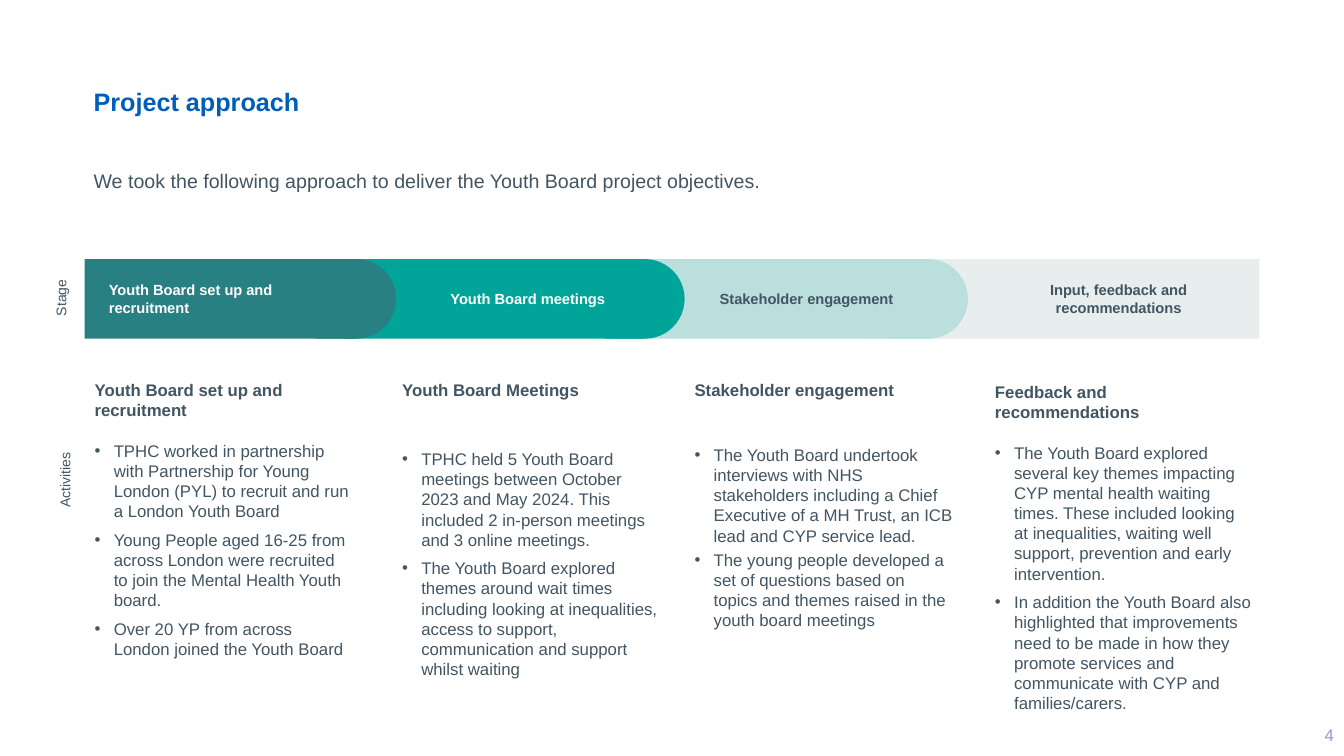
from dataclasses import dataclass

from lxml import etree
from pptx import Presentation
from pptx.dml.color import RGBColor
from pptx.enum.shapes import MSO_SHAPE
from pptx.enum.text import MSO_ANCHOR, PP_ALIGN
from pptx.oxml.ns import qn
from pptx.util import Inches, Pt

RECT, CAP = MSO_SHAPE.RECTANGLE, MSO_SHAPE.FLOWCHART_DELAY
TOP, MID = MSO_ANCHOR.TOP, MSO_ANCHOR.MIDDLE
LEFT, MIDDLE, RIGHT = PP_ALIGN.LEFT, PP_ALIGN.CENTER, PP_ALIGN.RIGHT


@dataclass(frozen=True)
class Theme:
    font: str = "Arial"
    blue: str = "005EB8"
    slate: str = "425563"
    white: str = "FFFFFF"
    page: str = "8C9DCD"
    deep: str = "298082"
    teal: str = "00A499"
    mint: str = "BADFDC"
    pale: str = "E8EDEE"
    title: float = 18
    lead: float = 14
    body: float = 12
    stage: float = 10.5
    side: float = 10


T = Theme()

TITLE = "Project approach"
LEAD = "We took the following approach to deliver the Youth Board project objectives."
PAGE = "4"

# text, fill, ink, bar left, bar right, rounded, label box, align, inset, wrap
STAGES = [
    ("Youth Board set up and recruitment", T.deep, T.white, 0.84, 3.93, True,
     (0.88, 2.76), LEFT, 0.2, True),
    ("Youth Board meetings", T.teal, T.white, 3.4, 6.79, True,
     (4.05, 2.37), MIDDLE, 0.2, True),
    ("Stakeholder engagement", T.mint, T.slate, 6.06, 9.6, True,
     (6.91, 2.18), MIDDLE, 0, False),
    ("Input, feedback and recommendations", T.pale, T.slate, 8.51, 12.49, False,
     (9.7, 2.79), MIDDLE, 0.2, True),
]
BAR_TOP, BAR_HIGH = 2.57, 0.79

SIDES = [("Stage", 0.22, 2.82, 0.77), ("Activities", -0.4, 4.63, 2.09)]

# left, top, height, gap under heading, gap under bullet, heading, bullets
COLUMNS = [
    (0.84, 3.72, 2.89, 14.4, 6, "Youth Board set up and recruitment", [
        "TPHC worked in partnership with Partnership for Young London (PYL) "
        "to recruit and run a London Youth Board",
        "Young People aged 16-25 from across London were recruited to join "
        "the Mental Health Youth board.",
        "Over 20 YP from across London joined the Youth Board",
    ]),
    (3.89, 3.72, 3.38, 34.8, 6, "Youth Board Meetings", [
        "TPHC held 5 Youth Board meetings between October 2023 and May 2024. "
        "This included 2 in-person meetings and 3 online meetings.",
        "The Youth Board explored themes around wait times including looking at "
        "inequalities, access to support, communication and support whilst waiting",
    ]),
    (6.79, 3.72, 3.1, 31.8, 3, "Stakeholder engagement", [
        "The Youth Board undertook interviews with NHS stakeholders including "
        "a Chief Executive of a MH Trust, an ICB lead and CYP service lead.",
        "The young people developed a set of questions based on topics and "
        "themes raised in the youth board meetings",
    ]),
    (9.77, 3.74, 3.7, 14.4, 6, "Feedback and recommendations", [
        "The Youth Board explored several key themes impacting CYP mental health "
        "waiting times. These included looking at inequalities, waiting well "
        "support, prevention and early intervention.",
        "In addition the Youth Board also highlighted that improvements need to "
        "be made in how they promote services and communicate with CYP and "
        "families/carers.",
    ]),
]
COL_WIDE = 2.76


def add_box(slide, left, top, wide, high, anchor=TOP, inset=None, wrap=True):
    box = slide.shapes.add_textbox(*map(Inches, (left, top, wide, high)))
    frame = box.text_frame
    frame.word_wrap = wrap
    frame.vertical_anchor = anchor
    if inset is not None:
        frame.margin_left = frame.margin_right = Inches(inset)
        frame.margin_top = frame.margin_bottom = Inches(inset)
    return box


def add_run(para, text, size, ink, bold=False, align=LEFT):
    para.alignment = align
    run = para.add_run()
    run.text = text
    font = run.font
    font.name, font.size, font.bold = T.font, Pt(size), bold
    font.color.rgb = RGBColor.from_string(ink)


def add_fill(slide, kind, left, wide, fill):
    shape = slide.shapes.add_shape(
        kind, *map(Inches, (left, BAR_TOP, wide, BAR_HIGH)))
    shape.shadow.inherit = False
    shape.fill.solid()
    shape.fill.fore_color.rgb = RGBColor.from_string(fill)
    shape.line.fill.background()


def set_bullet(para):
    props = para._p.get_or_add_pPr()
    props.set("marL", str(Inches(0.19)))
    props.set("indent", str(-Inches(0.19)))
    etree.SubElement(props, qn("a:buFont")).set("typeface", T.font)
    etree.SubElement(props, qn("a:buChar")).set("char", "•")


def add_stages(slide):
    for text, fill, ink, left, right, curved, *rest in reversed(STAGES):
        body = right - left - (BAR_HIGH / 2 if curved else 0)
        add_fill(slide, RECT, left, body, fill)
        if curved:
            add_fill(slide, CAP, right - BAR_HIGH, BAR_HIGH, fill)
    for text, fill, ink, left, right, curved, spot, align, inset, wrap in STAGES:
        x, wide = spot
        box = add_box(slide, x, BAR_TOP, wide, BAR_HIGH, MID, inset, wrap)
        add_run(box.text_frame.paragraphs[0], text, T.stage, ink, True, align)


def add_column(slide, left, top, high, gap, after, head, points):
    frame = add_box(slide, left, top, COL_WIDE, high).text_frame
    para = frame.paragraphs[0]
    para.space_after = Pt(gap)
    add_run(para, head, T.body, T.slate, True)
    for point in points:
        para = frame.add_paragraph()
        para.space_after = Pt(after)
        set_bullet(para)
        add_run(para, point, T.body, T.slate)


def main():
    deck = Presentation()
    deck.slide_width, deck.slide_height = Inches(13.33), Inches(7.5)
    slide = deck.slides.add_slide(deck.slide_layouts[6])

    for text, top, wide, high, size, ink, bold in [
        (TITLE, 0.84, 5.25, 0.8, T.title, T.blue, True),
        (LEAD, 1.65, 11.67, 0.35, T.lead, T.slate, False),
    ]:
        para = add_box(slide, 0.83, top, wide, high).text_frame.paragraphs[0]
        para.line_spacing = 0.9
        add_run(para, text, size, ink, bold)

    add_stages(slide)
    for text, left, top, wide in SIDES:
        box = add_box(slide, left, top, wide, 0.27)
        box.rotation = 270
        add_run(box.text_frame.paragraphs[0], text, T.side, T.slate, align=MIDDLE)
    for column in COLUMNS:
        add_column(slide, *column)

    box = add_box(slide, 12.36, 7.09, 0.97, 0.4, MID)
    add_run(box.text_frame.paragraphs[0], PAGE, T.body, T.page, align=RIGHT)
    deck.save("out.pptx")


if __name__ == "__main__":
    main()
